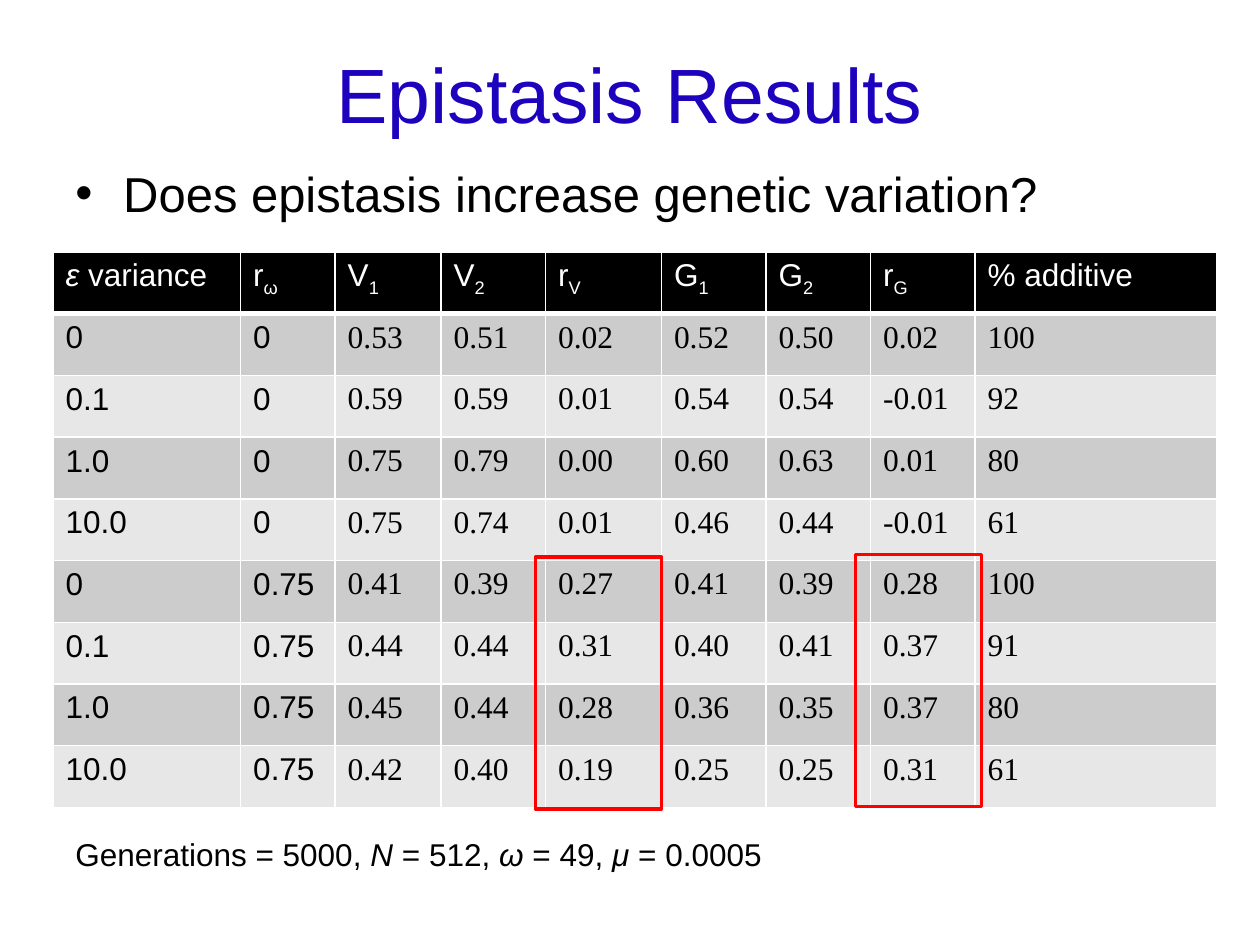
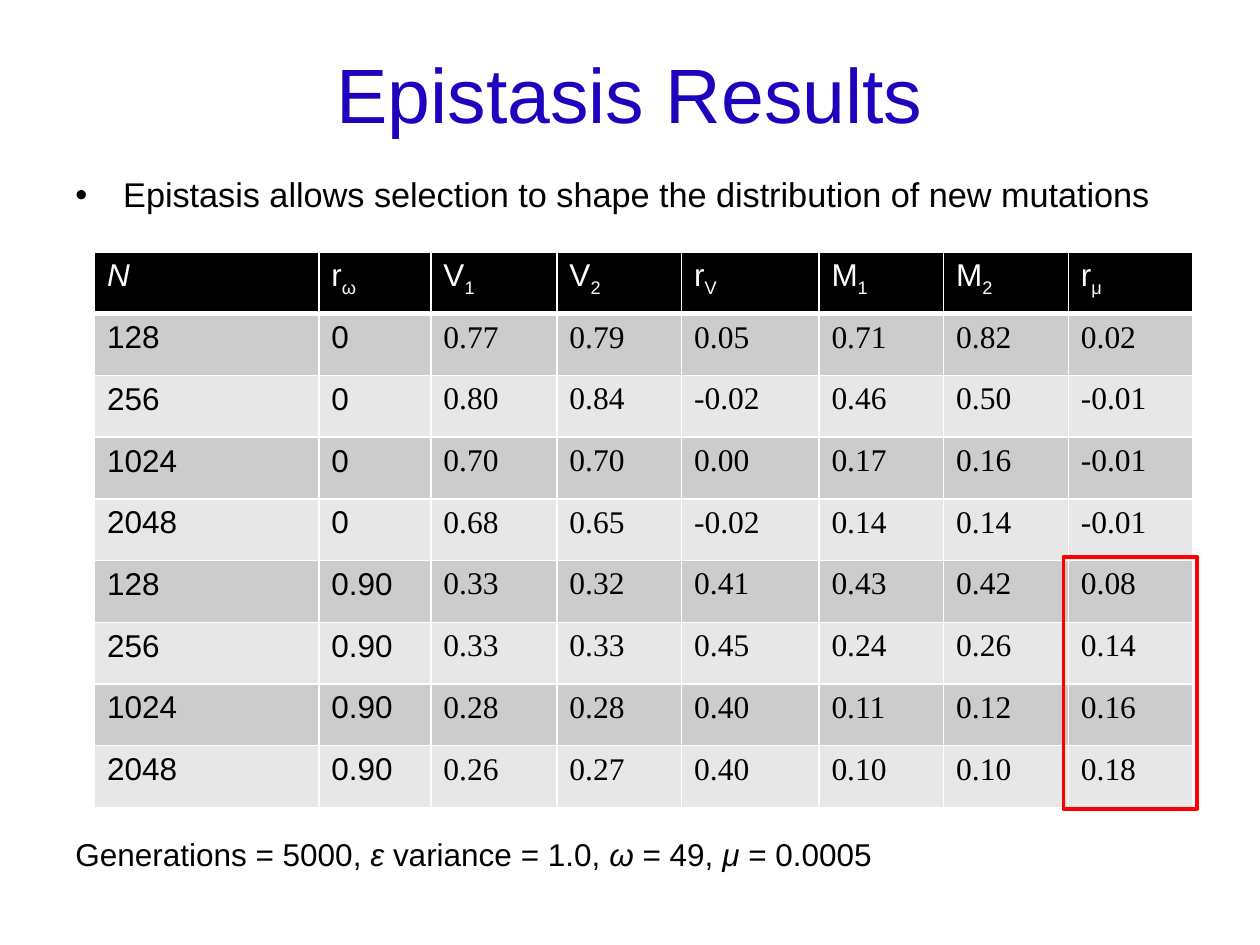
from lxml import etree
from pptx import Presentation
from pptx.dml.color import RGBColor
from pptx.enum.shapes import MSO_SHAPE
from pptx.enum.text import MSO_ANCHOR, PP_ALIGN
from pptx.oxml.ns import qn
from pptx.util import Inches, Pt

RECT = MSO_SHAPE.RECTANGLE
MIDDLE = MSO_ANCHOR.MIDDLE
LEFT, CENTER = PP_ALIGN.LEFT, PP_ALIGN.CENTER
COLORS = {"title": "1D02BE", "text": "000000", "header": "000000", "white": "FFFFFF",
          "odd": "CCCCCC", "even": "E7E7E7", "mark": "FF0000"}
SANS, SERIF = "Arial", "Times New Roman"
GRID = 0.5
TABLE_TOP, ROW_HEIGHT = 4, 0.98


def color(name):
    return RGBColor.from_string(COLORS[name])


def units(*lengths):
    return [Inches(n * GRID) for n in lengths]


class Deck:
    def __init__(self):
        self.prs = Presentation()
        self.prs.slide_width, self.prs.slide_height = units(20, 15)
        self.s = None

    def new_slide(self):
        self.s = self.prs.slides.add_slide(self.prs.slide_layouts[6])

    def add_runs(self, p, text, size=18, tint="text", face=SANS):
        for i, styled in enumerate(text.split("*")):
            for j, part in enumerate(styled.split("_")):
                if not part:
                    continue
                r = p.add_run()
                r.text = part
                f = r.font
                f.size, f.name, f.bold, f.italic = Pt(size), face, False, i % 2 == 1
                f.color.rgb = color(tint)
                if j:
                    r._r.get_or_add_rPr().set("baseline", "-25000")

    def text(self, box, text, align=LEFT, anchor=None, **style):
        tf = self.s.shapes.add_textbox(*units(*box)).text_frame
        tf.word_wrap = True
        if anchor is not None:
            tf.vertical_anchor = anchor
        p = tf.paragraphs[0]
        p.alignment = align
        self.add_runs(p, text, **style)
        return p

    def title(self, text):
        self.text((1, 0.6, 18, 1.74), text, CENTER, MIDDLE, size=44, tint="title")

    def bullet(self, row, height, text, size):
        p = self.text((1, row, 18, height), text, size=size)
        pPr = p._p.get_or_add_pPr()
        pPr.set("marL", str(Inches(0.38)))
        pPr.set("indent", str(-Inches(0.38)))
        before = etree.SubElement(pPr, qn("a:spcBef"))
        etree.SubElement(before, qn("a:spcPct"), val="20000")
        etree.SubElement(pPr, qn("a:buFont"), typeface=SANS)
        etree.SubElement(pPr, qn("a:buChar"), char="•")

    def footnote(self, text):
        self.text((1, 13.16, 18.16, 0.8), text)

    def borders(self, cell, bottom):
        tcPr = cell._tc.get_or_add_tcPr()
        for side, width in (("L", 1), ("R", 1), ("T", 1), ("B", bottom)):
            ln = etree.SubElement(tcPr, qn(f"a:ln{side}"), w=str(Pt(width)))
            fill = etree.SubElement(ln, qn("a:solidFill"))
            etree.SubElement(fill, qn("a:srgbClr"), val=COLORS["white"])

    def table(self, left, widths, header, rows):
        lines = [header] + rows
        box = units(left, TABLE_TOP, sum(widths), ROW_HEIGHT * len(lines))
        table = self.s.shapes.add_table(len(lines), len(widths), *box).table
        for column, width in zip(table.columns, units(*widths)):
            column.width = width
        for i, line in enumerate(lines):
            table.rows[i].height = units(ROW_HEIGHT)[0]
            band = "header" if i == 0 else "odd" if i % 2 else "even"
            for j, value in enumerate(line):
                cell = table.cell(i, j)
                self.borders(cell, 1 if i else 3)
                cell.fill.solid()
                cell.fill.fore_color.rgb = color(band)
                self.add_runs(cell.text_frame.paragraphs[0], value,
                              tint="text" if i else "white",
                              face=SERIF if i and j > 1 else SANS)

    def highlight(self, left, top, width):
        sp = self.s.shapes.add_shape(RECT, *units(left, top, width, 4))
        sp.shadow.inherit = False
        sp.fill.background()
        sp.line.color.rgb = color("mark")
        sp.line.width = Pt(2)


def rows(block):
    return [line.split() for line in block.strip().splitlines()]


VARIATION = rows("""
0 0 0.53 0.51 0.02 0.52 0.50 0.02 100
0.1 0 0.59 0.59 0.01 0.54 0.54 -0.01 92
1.0 0 0.75 0.79 0.00 0.60 0.63 0.01 80
10.0 0 0.75 0.74 0.01 0.46 0.44 -0.01 61
0 0.75 0.41 0.39 0.27 0.41 0.39 0.28 100
0.1 0.75 0.44 0.44 0.31 0.40 0.41 0.37 91
1.0 0.75 0.45 0.44 0.28 0.36 0.35 0.37 80
10.0 0.75 0.42 0.40 0.19 0.25 0.25 0.31 61
""")
MUTATION = rows("""
128 0 0.77 0.79 0.05 0.71 0.82 0.02
256 0 0.80 0.84 -0.02 0.46 0.50 -0.01
1024 0 0.70 0.70 0.00 0.17 0.16 -0.01
2048 0 0.68 0.65 -0.02 0.14 0.14 -0.01
128 0.90 0.33 0.32 0.41 0.43 0.42 0.08
256 0.90 0.33 0.33 0.45 0.24 0.26 0.14
1024 0.90 0.28 0.28 0.40 0.11 0.12 0.16
2048 0.90 0.26 0.27 0.40 0.10 0.10 0.18
""")
SHARED_HEADER = ["r_ω", "V_1", "V_2", "r_V"]


def variation_slide(deck):
    deck.new_slide()
    deck.title("Epistasis Results")
    deck.bullet(2.5, 1.34, "Does epistasis increase genetic variation?", 28)
    deck.table(0.84, [2.98, 1.5, 1.68, 1.66, 1.84, 1.66, 1.66, 1.66, 3.84],
               ["*ε* variance", *SHARED_HEADER, "G_1", "G_2", "r_G", "% additive"],
               VARIATION)
    deck.footnote("Generations = 5000, *N* = 512, *ω* = 49, *μ* = 0.0005")
    deck.highlight(8.5, 8.84, 2)
    deck.highlight(13.58, 8.8, 2)


def mutation_slide(deck):
    deck.new_slide()
    deck.title("Epistasis Results")
    deck.bullet(2.66, 1, "Epistasis allows selection to shape the distribution of new mutations", 19.6)
    deck.table(1.5, [3.56, 1.78, 2, 1.98, 2.18, 1.98, 1.98, 1.98],
               ["*N*", *SHARED_HEADER, "M_1", "M_2", "r_μ"], MUTATION)
    deck.footnote("Generations = 5000, *ε* variance = 1.0, *ω* = 49, *μ* = 0.0005")
    deck.highlight(16.88, 8.84, 2.12)


def main():
    deck = Deck()
    variation_slide(deck)
    mutation_slide(deck)
    deck.prs.save("out.pptx")


if __name__ == "__main__":
    main()
